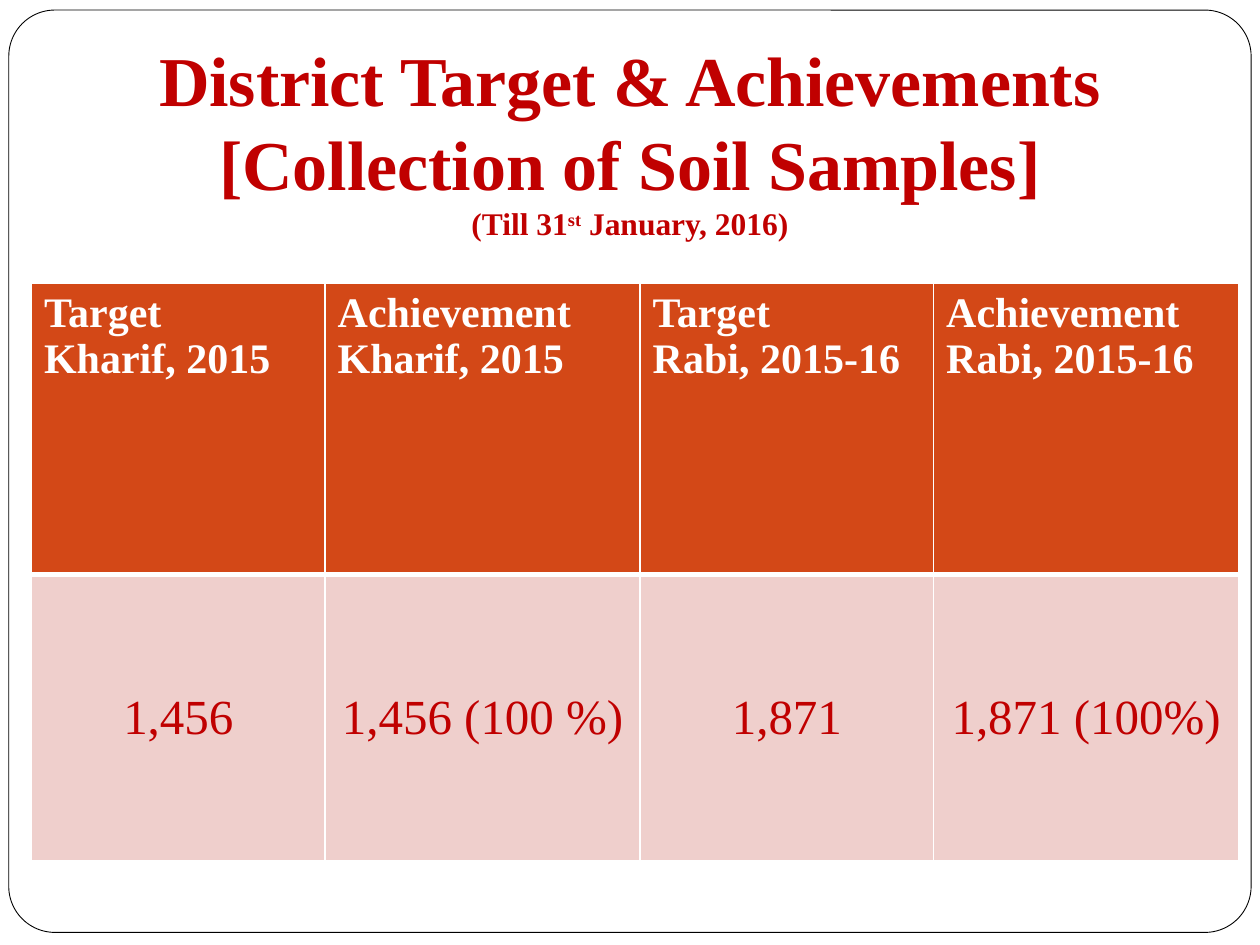
from lxml.etree import SubElement
from pptx import Presentation
from pptx.dml.color import RGBColor
from pptx.enum.shapes import MSO_SHAPE
from pptx.enum.text import MSO_ANCHOR, MSO_AUTO_SIZE, PP_ALIGN
from pptx.oxml.ns import qn
from pptx.util import Inches, Pt

# Content
HEADING = ["District Target & Achievements", "[Collection of Soil Samples]"]
DATE_RUNS = [("(Till 31", False), ("st", True), (" January, 2016)", False)]
COLUMNS = [  # width, header, value
    (2.33, "Target\nKharif, 2015", "1,456"),
    (2.5, "Achievement\nKharif, 2015", "1,456 (100 %)"),
    (2.33, "Target\nRabi, 2015-16", "1,871"),
    (2.42, "Achievement\nRabi, 2015-16", "1,871 (100%)"),
]
ROW_HEIGHTS = [2.31, 2.27]

FONT = "Times New Roman"
RED = RGBColor(0xC0, 0x00, 0x00)
ORANGE = RGBColor(0xD3, 0x48, 0x17)
PINK = RGBColor(0xEF, 0xCF, 0xCC)
WHITE = RGBColor(0xFF, 0xFF, 0xFF)
BLACK = RGBColor(0x00, 0x00, 0x00)


def style(font, size, color, bold):
    font.name, font.size, font.bold = FONT, Pt(size), bold
    font.color.rgb = color


def set_borders(cell, bottom):
    properties = cell._tc.get_or_add_tcPr()
    widths = {"a:lnL": 1, "a:lnR": 1, "a:lnT": 1, "a:lnB": bottom}
    for position, (tag, width) in enumerate(widths.items()):
        line = SubElement(properties, qn(tag), w=str(Pt(width)))
        fill = SubElement(line, qn("a:solidFill"))
        SubElement(fill, qn("a:srgbClr"), val=str(WHITE))
        properties.insert(position, line)


prs = Presentation()
prs.slide_width, prs.slide_height = Inches(10), Inches(7.5)
slide = prs.slides.add_slide(prs.slide_layouts[5])

# Rounded frame, behind everything
frame = slide.shapes.add_shape(MSO_SHAPE.ROUNDED_RECTANGLE, Inches(0.07),
                               Inches(0.08), Inches(9.86), Inches(7.32))
frame.adjustments[0] = 0.05
frame.shadow.inherit = False
frame.fill.solid()
frame.fill.fore_color.rgb = WHITE
frame.line.color.rgb = BLACK
frame.line.width = Pt(0.5)
slide.shapes._spTree.insert(2, frame._element)

# Title
title = slide.shapes.title
title.left, title.top = Inches(0.5), Inches(0)
title.width, title.height = Inches(9), Inches(2.02)
title_frame = title.text_frame
title_frame.auto_size = MSO_AUTO_SIZE.NONE
title_frame.word_wrap = True
title_frame.vertical_anchor = MSO_ANCHOR.BOTTOM
title_frame.margin_bottom = Inches(0.1)
heading = title_frame.paragraphs[0]
heading.alignment = PP_ALIGN.CENTER
style(heading.font, 40, RED, True)
for text in HEADING:
    heading.add_run().text = text
    heading.add_line_break()
for text, raised in DATE_RUNS:
    run = heading.add_run()
    run.text = text
    run.font.size = Pt(18)
    if raised:
        run.font._element.set("baseline", "30000")

# Table of targets and achievements
table = slide.shapes.add_table(
    len(ROW_HEIGHTS), len(COLUMNS), Inches(0.25), Inches(2.25),
    Inches(sum(width for width, _, _ in COLUMNS)),
    Inches(sum(ROW_HEIGHTS))).table
for row, height in zip(table.rows, ROW_HEIGHTS):
    row.height = Inches(height)

ROW_STYLES = [  # fill, size, colour, bold, alignment, anchor, bottom border
    (ORANGE, 24, WHITE, True, PP_ALIGN.LEFT, MSO_ANCHOR.TOP, 3),
    (PINK, 28, RED, False, PP_ALIGN.CENTER, MSO_ANCHOR.MIDDLE, 1),
]
for column, (width, *texts) in enumerate(COLUMNS):
    table.columns[column].width = Inches(width)
    for row, (text, row_style) in enumerate(zip(texts, ROW_STYLES)):
        fill, size, color, bold, alignment, anchor, bottom = row_style
        cell = table.cell(row, column)
        cell.text = text
        cell.vertical_anchor = anchor
        cell.fill.solid()
        cell.fill.fore_color.rgb = fill
        set_borders(cell, bottom)
        for paragraph in cell.text_frame.paragraphs:
            paragraph.alignment = alignment
            style(paragraph.font, size, color, bold)

prs.save("out.pptx")
